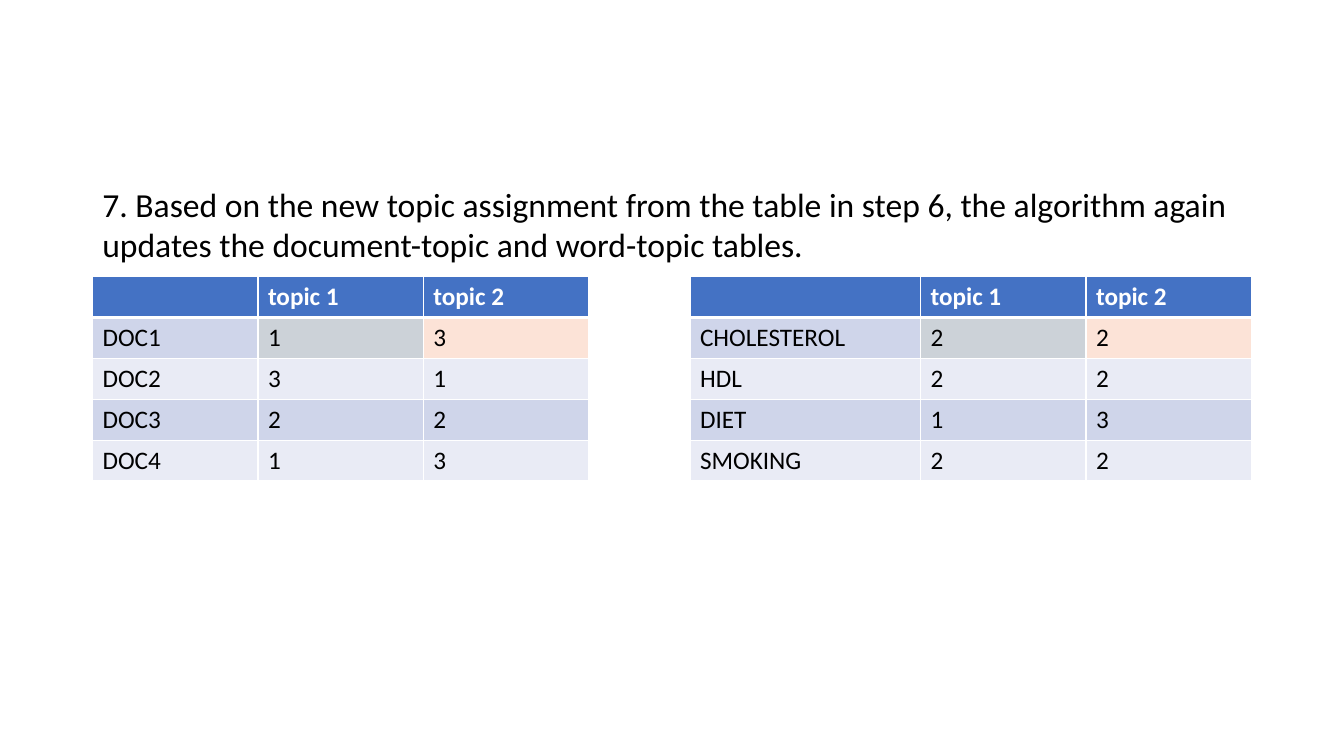
from lxml import etree
from pptx import Presentation
from pptx.dml.color import RGBColor
from pptx.enum.text import MSO_ANCHOR
from pptx.oxml.ns import qn
from pptx.util import Cm, Pt

# Content
STEP_NUMBER = 7
STEP_TEXT = (" Based on the new topic assignment from the table in step 6, "
             "the algorithm again updates the document-topic and "
             "word-topic tables.")
TOPIC_COUNTS = [
    ("", "topic 1", "topic 2", "", "", "topic 1", "topic 2"),
    ("DOC1", "1", "3", "", "CHOLESTEROL", "2", "2"),
    ("DOC2", "3", "1", "", "HDL", "2", "2"),
    ("DOC3", "2", "2", "", "DIET", "1", "3"),
    ("DOC4", "1", "3", "", "SMOKING", "2", "2"),
]
GAP_COLUMN = 3

# Format
FONT = "Calibri"
BLACK = RGBColor(0x00, 0x00, 0x00)
WHITE = RGBColor(0xFF, 0xFF, 0xFF)
HEADER_BLUE = RGBColor(0x44, 0x72, 0xC4)
BAND_DARK = RGBColor(0xCF, 0xD5, 0xEA)
BAND_LIGHT = RGBColor(0xE9, 0xEB, 0xF5)
TOPIC_1_GREY = RGBColor(0xCC, 0xD2, 0xD8)
TOPIC_2_PEACH = RGBColor(0xFC, 0xE3, 0xD7)
HIGHLIGHTS = {(1, 1): TOPIC_1_GREY, (1, 2): TOPIC_2_PEACH,
              (1, 5): TOPIC_1_GREY, (1, 6): TOPIC_2_PEACH}
MIDDLE = MSO_ANCHOR.MIDDLE

# Layout
LEFT, WIDTH = Cm(2.33), Cm(29.21)
STEP_TOP, STEP_HEIGHT = Cm(4.5), Cm(2.31)
TABLE_TOP, ROW_HEIGHT = Cm(6.97), Cm(1.03)
TOPIC_WIDTH, GAP_WIDTH, WORD_WIDTH = Cm(4.17), Cm(2.55), Cm(5.81)
COLUMN_WIDTHS = [TOPIC_WIDTH] * 3 + [GAP_WIDTH, WORD_WIDTH] + [TOPIC_WIDTH] * 2


def write(frame, text, size=18, color=BLACK, bold=False):
    para = frame.paragraphs[0]
    span = para.add_run()
    span.text = text
    span.font.name = FONT
    span.font.size = Pt(size)
    span.font.bold = bold
    span.font.color.rgb = color
    return para


def number_paragraph(para, start):
    properties = para._p.get_or_add_pPr()
    properties.set("marL", "0")
    properties.set("indent", "0")
    etree.SubElement(properties, qn("a:buFont"), typeface="+mj-lt")
    etree.SubElement(properties, qn("a:buAutoNum"),
                     type="arabicPeriod", startAt=str(start))


def add_borders(cell, color, bottom):
    properties = cell._tc.get_or_add_tcPr()
    widths = {"a:lnL": 1, "a:lnR": 1, "a:lnT": 1, "a:lnB": bottom}
    for position, (side, width) in enumerate(widths.items()):
        line = etree.Element(qn(side), w=str(Pt(width)))
        fill = etree.SubElement(line, qn("a:solidFill"))
        etree.SubElement(fill, qn("a:srgbClr"), val=str(color))
        properties.insert(position, line)


def cell_color(row, column):
    if row == 0:
        return HEADER_BLUE
    band = BAND_DARK if row % 2 else BAND_LIGHT
    return HIGHLIGHTS.get((row, column), band)


deck = Presentation()
deck.slide_width, deck.slide_height = Cm(33.87), Cm(19.05)
page = deck.slides.add_slide(deck.slide_layouts[6])

# Numbered step
box = page.shapes.add_textbox(LEFT, STEP_TOP, WIDTH, STEP_HEIGHT)
box.text_frame.word_wrap = True
box.text_frame.vertical_anchor = MIDDLE
number_paragraph(write(box.text_frame, STEP_TEXT, size=24), STEP_NUMBER)

# Document-topic and word-topic counts, side by side
table = page.shapes.add_table(
    len(TOPIC_COUNTS), len(COLUMN_WIDTHS), LEFT, TABLE_TOP,
    WIDTH, ROW_HEIGHT * len(TOPIC_COUNTS)).table
table.horz_banding = False
for column, width in enumerate(COLUMN_WIDTHS):
    table.columns[column].width = width
for row, values in enumerate(TOPIC_COUNTS):
    table.rows[row].height = ROW_HEIGHT
    header = row == 0
    for column, value in enumerate(values):
        cell = table.cell(row, column)
        if column == GAP_COLUMN:
            cell.fill.background()
        else:
            cell.fill.solid()
            cell.fill.fore_color.rgb = cell_color(row, column)
        if value:
            write(cell.text_frame, value,
                  color=WHITE if header else BLACK, bold=header)
        add_borders(cell, WHITE, bottom=3 if header else 1)

deck.save("out.pptx")
